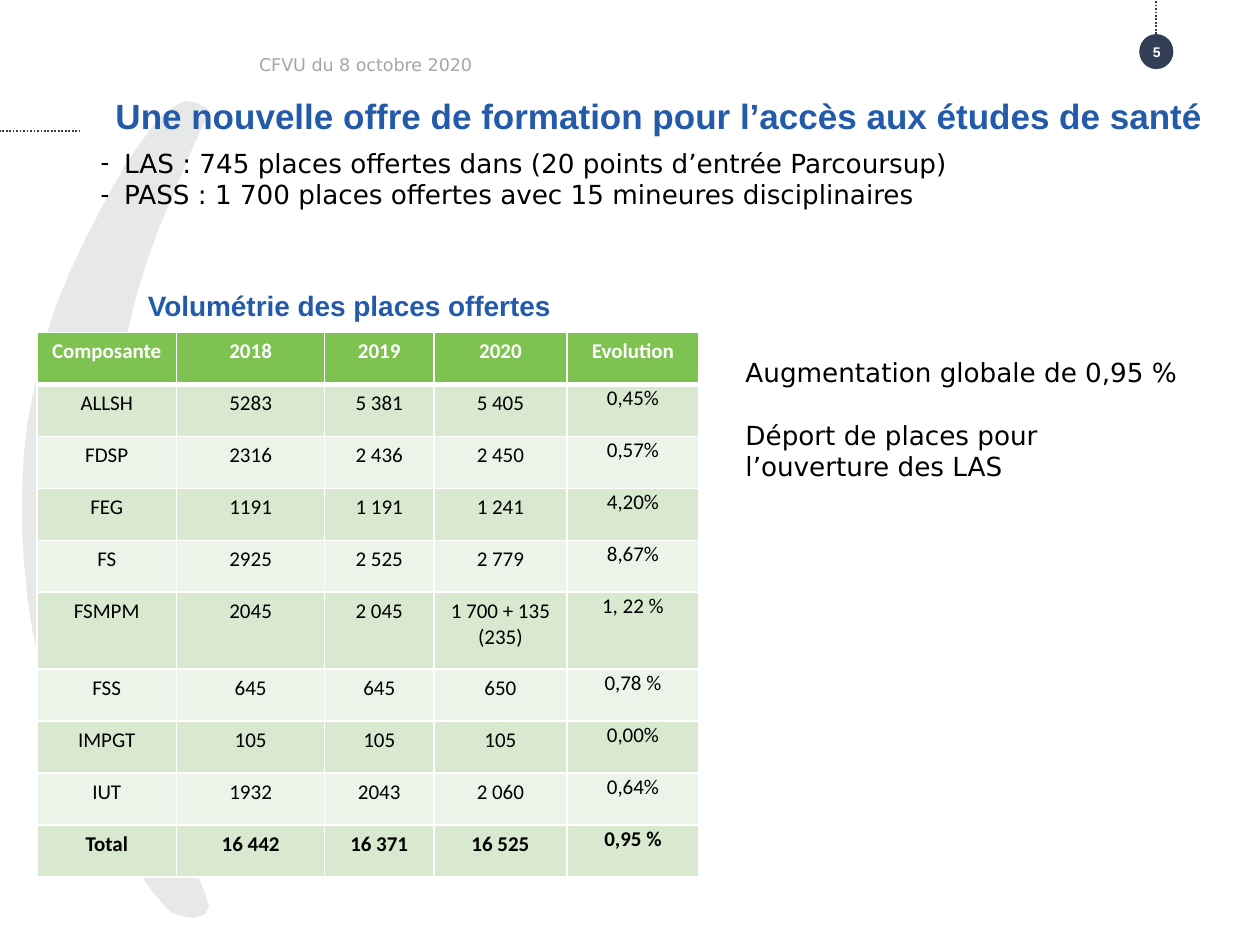
"""Build the slide on places offered for health studies."""
import lxml.etree
import pptx
import pptx.dml.color
import pptx.enum.dml
import pptx.enum.shapes
import pptx.enum.text
import pptx.oxml.ns
import pptx.util

Pt = pptx.util.Pt
qn = pptx.oxml.ns.qn
ALIGN = pptx.enum.text.PP_ALIGN
ANCHOR = pptx.enum.text.MSO_ANCHOR
BLUE, NAVY, GREY, WHITE, BLACK = "235BAA", "313E56", "E7E8E8", "FFFFFF", "000000"
HEAD, BANDS = "7EC251", ("ECF4E9", "D8E9D0")

UPPER = [
    (119, 65), (118, 62), (112, 59), (106, 58), (98, 62), (91, 68), (85, 76),
    (77, 87), (71, 96), (61, 114), (50, 135), (41, 154), (33, 173), (28, 188),
    (23, 207), (19, 226), (16, 243), (14, 259), (13, 281), (13, 302), (14, 320),
    (16, 341), (19, 361), (23, 377), (28, 395), (35, 416), (41, 429), (50, 446),
    (60, 467), (60, 283), (61, 261), (63, 240), (66, 220), (70, 200), (77, 171),
    (84, 148), (91, 129), (99, 110), (109, 86), (114, 75)]
LOWER = [
    (119, 518), (117, 511), (112, 499), (106, 489), (99, 472), (91, 451),
    (82, 424), (76, 404), (69, 378), (65, 354), (61, 322), (60, 300), (60, 467),
    (67, 479), (73, 489), (80, 499), (88, 510), (94, 517), (98, 521), (103, 523),
    (109, 524), (112, 524), (117, 522)]

ROWS = [
    ("Composante", "2018", "2019", "2020", "Evolution"),
    ("ALLSH", "5283", "5 381", "5 405", "0,45%"),
    ("FDSP", "2316", "2 436", "2 450", "0,57%"),
    ("FEG", "1191", "1 191", "1 241", "4,20%"),
    ("FS", "2925", "2 525", "2 779", "8,67%"),
    ("FSMPM", "2045", "2 045", "1 700 + 135 (235)", "1, 22 %"),
    ("FSS", "645", "645", "650", "0,78 %"),
    ("IMPGT", "105", "105", "105", "0,00%"),
    ("IUT", "1932", "2043", "2 060", "0,64%"),
    ("Total", "16 442", "16 371", "16 525", "0,95 %")]
WIDTHS = (80, 84.5, 62.5, 76, 75.5)


def tint(hue):
    """Return the colour for a hex string."""
    return pptx.dml.color.RGBColor.from_string(hue)


def paint(fill, hue):
    """Make a fill solid in one colour."""
    fill.solid()
    fill.fore_color.rgb = tint(hue)


def style(part, face, size, hue, bold=False, align=ALIGN.LEFT):
    """Format one paragraph and its runs."""
    part.alignment = align
    part.space_before = Pt(0)
    for run in part.runs:
        font = run.font
        font.name, font.size, font.bold = face, Pt(size), bold
        font.color.rgb = tint(hue)


def fit(shape, box, anchor, pad=True):
    """Place a text shape and set how its text sits."""
    shape.left, shape.top, shape.width, shape.height = map(Pt, box)
    frame = shape.text_frame
    frame.word_wrap = True
    frame.auto_size = pptx.enum.text.MSO_AUTO_SIZE.NONE
    frame.vertical_anchor = anchor
    if not pad:
        frame.margin_left = frame.margin_right = Pt(0)
        frame.margin_top = frame.margin_bottom = Pt(0)
    return frame


def write(shape, text, box, anchor, look, pad=True):
    """Fill a text shape and style all its paragraphs."""
    frame = fit(shape, box, anchor, pad)
    frame.text = text
    for part in frame.paragraphs:
        style(part, *look)
    return frame


def label(slide, text, box, anchor, look, pad=True):
    """Add a text box."""
    shape = slide.shapes.add_textbox(*map(Pt, box))
    return write(shape, text, box, anchor, look, pad)


def curve(slide, points):
    """Add one half of the grey crescent."""
    pen = slide.shapes.build_freeform(*points[0], scale=Pt(1))
    pen.add_line_segments(points[1:], close=True)
    shape = pen.convert_to_shape()
    shape.shadow.inherit = False
    paint(shape.fill, GREY)
    shape.line.color.rgb = tint(GREY)
    shape.line.width = Pt(0.75)


def dots(slide, *ends):
    """Add a dotted navy line."""
    kind = pptx.enum.shapes.MSO_CONNECTOR.STRAIGHT
    wire = slide.shapes.add_connector(kind, *map(Pt, ends))
    wire.line.color.rgb = tint(NAVY)
    wire.line.width = Pt(1)
    wire.line.dash_style = pptx.enum.dml.MSO_LINE.ROUND_DOT
    lxml.etree.SubElement(wire._element.spPr, qn("a:effectLst"))
    return wire


def badge(slide):
    """Add the page number disc with its line."""
    kind = pptx.enum.shapes.MSO_SHAPE.OVAL
    disc = slide.shapes.add_shape(kind, Pt(651), Pt(19.5), Pt(19.5), Pt(20))
    disc.shadow.inherit = False
    paint(disc.fill, NAVY)
    disc.line.fill.background()
    dots(slide, 660.75, 19.5, 660.75, 0).begin_connect(disc, 0)
    look = ("Arial", 8, WHITE, True, ALIGN.CENTER)
    label(slide, "5", (643, 24, 36, 11), ANCHOR.MIDDLE, look)


def dash(part):
    """Give a paragraph a hanging dash bullet."""
    props = part._p.get_or_add_pPr()
    props.set("marL", str(Pt(13.5)))
    props.set("indent", str(-Pt(13.5)))
    lxml.etree.SubElement(props, qn("a:buChar")).set("char", "-")


def edge(cell, side, width):
    """Draw one white border of a cell."""
    props = cell._tc.get_or_add_tcPr()
    line = lxml.etree.SubElement(props, qn("a:" + side), w=str(Pt(width)))
    fill = lxml.etree.SubElement(line, qn("a:solidFill"))
    lxml.etree.SubElement(fill, qn("a:srgbClr")).set("val", WHITE)


def grid(slide):
    """Add the table of places by component."""
    frame = slide.shapes.add_table(
        len(ROWS), len(WIDTHS), Pt(21), Pt(190), Pt(sum(WIDTHS)), Pt(311))
    table = frame.table
    for col, width in zip(table.columns, WIDTHS):
        col.width = Pt(width)
    for i, row in enumerate(ROWS):
        table.rows[i].height = Pt(44 if row[0] == "FSMPM" else 29.7)
        for j, text in enumerate(row):
            cell = table.cell(i, j)
            edge(cell, "lnL", 1)
            edge(cell, "lnR", 1)
            edge(cell, "lnT", 3 if i == 1 else 1)
            edge(cell, "lnB", 3 if i == 0 else 1)
            paint(cell.fill, BANDS[i % 2] if i else HEAD)
            cell.text = text
            if i and j == len(row) - 1:
                cell.margin_left = cell.margin_right = cell.margin_top = Pt(0.75)
                cell.margin_bottom = Pt(0)
            style(cell.text_frame.paragraphs[0], "Calibri", 12,
                  BLACK if i else WHITE, i in (0, len(ROWS) - 1), ALIGN.CENTER)


def main():
    """Build and save the slide."""
    deck = pptx.Presentation()
    deck.slide_width, deck.slide_height = Pt(720), Pt(540)
    slide = deck.slides.add_slide(deck.slide_layouts[1])
    curve(slide, UPPER)
    curve(slide, LOWER)
    badge(slide)
    dots(slide, 46, 75, 0, 75)
    plain = ("DejaVu Sans", 15, BLACK)
    title, body = slide.placeholders
    for shape in (title, body):
        slide.shapes._spTree.append(shape._element)
    write(title, "Une nouvelle offre de formation pour l’accès aux études de santé",
          (66, 54, 636, 50), ANCHOR.TOP, ("Arial", 20, BLUE, True), False)
    points = fit(body, (57.5, 84, 493, 36), ANCHOR.MIDDLE, False)
    points.text = ("LAS : 745 places offertes dans (20 points d’entrée Parcoursup)\n"
                   "PASS : 1 700 places offertes avec 15 mineures disciplinaires")
    for part in points.paragraphs:
        dash(part)
        style(part, *plain)
    note = label(slide, "Augmentation globale de 0,95 %\n"
                 "Déport de places pour l’ouverture des LAS",
                 (426, 203, 253, 73), ANCHOR.MIDDLE, plain, False)
    note.paragraphs[1].space_before = Pt(18)
    grid(slide)
    label(slide, "Volumétrie des places offertes", (84.5, 165, 258, 24.5),
          ANCHOR.TOP, ("Arial", 16, BLUE, True), False)
    label(slide, "CFVU du 8 octobre 2020", (141, 21, 477, 32),
          ANCHOR.MIDDLE, ("DejaVu Sans", 10, "A6A6A6"))
    deck.save("out.pptx")


if __name__ == "__main__":
    main()
